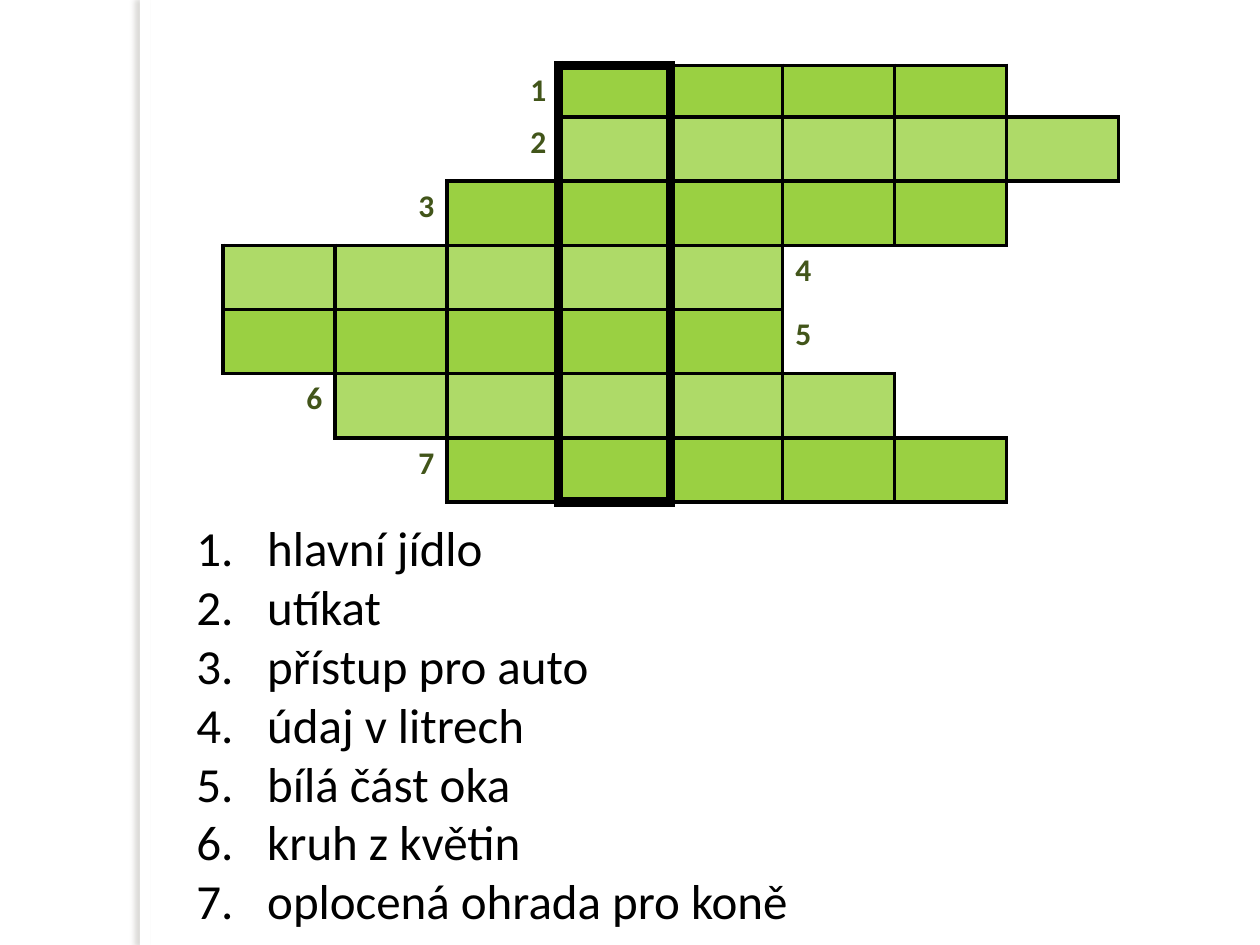
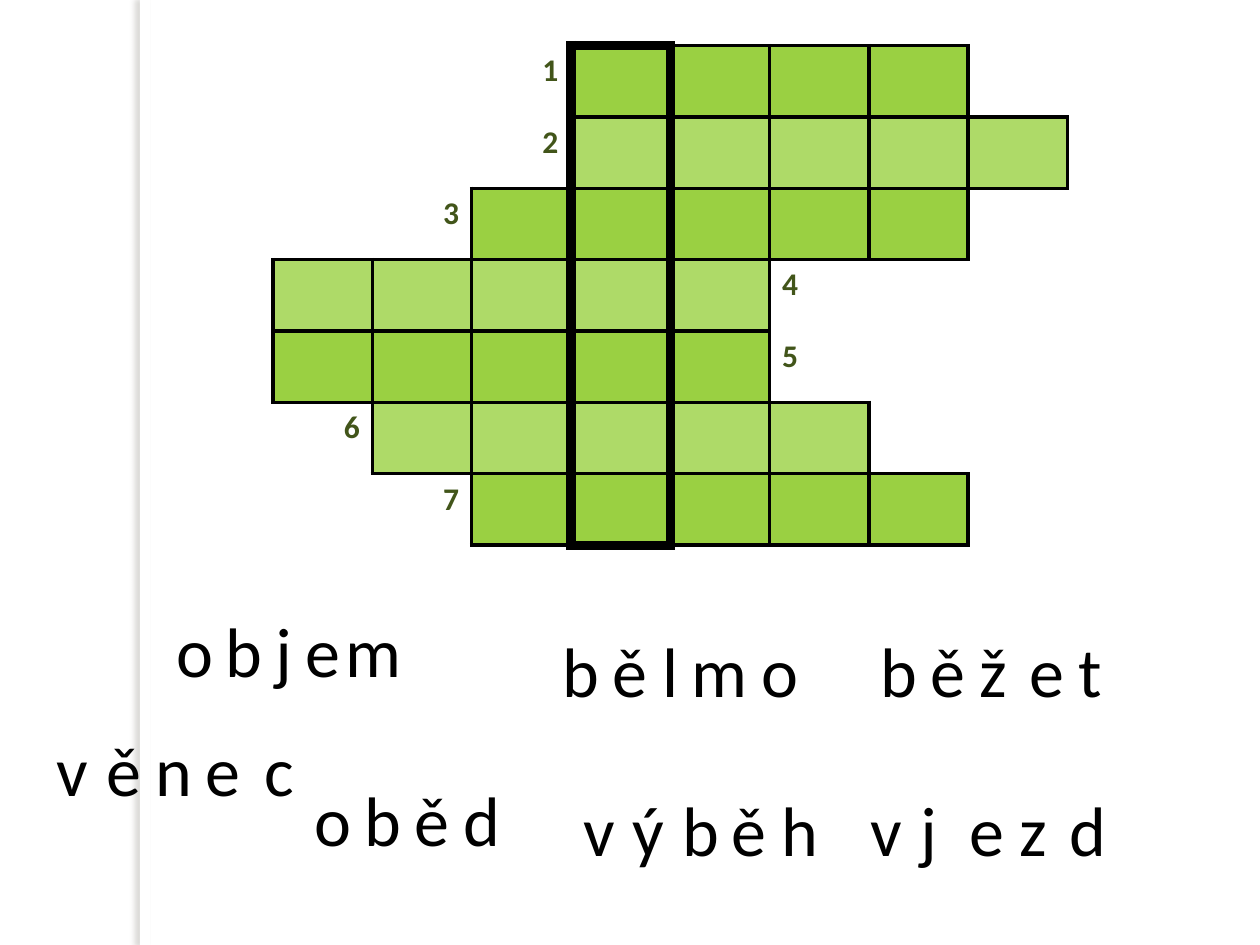
from lxml import etree
from pptx import Presentation
from pptx.dml.color import RGBColor
from pptx.enum import shapes, text
from pptx.oxml import ns
from pptx.util import Pt

WHITE = RGBColor(0xFF, 0xFF, 0xFF)
BLACK = RGBColor(0, 0, 0)
SHADOW = RGBColor(0x73, 0x6F, 0x63)
GREEN = RGBColor(0x9A, 0xD0, 0x42)
LIGHT_GREEN = RGBColor(0xAE, 0xDA, 0x68)
DARK_GREEN = RGBColor(0x42, 0x55, 0x1A)

FONT = "Calibri"
NUMBER_FORMAT = {"name": FONT, "size": Pt(18), "bold": True}
CLUE_FORMAT = {"name": FONT, "size": Pt(28)}
LETTER_FORMAT = {"name": FONT, "size": Pt(40)}

THIN, THICK = 2.25, 6
COLUMNS = 8
KEY_COLUMN = 3
# First column and number of letters of each answer
ANSWERS = [(3, 4), (3, 5), (2, 5), (0, 5), (0, 5), (1, 5), (2, 5)]

CLUES = ["hlavní jídlo", "utíkat", "přístup pro auto", "údaj v litrech",
         "bílá část oka", "kruh z květin", "oplocená ohrada pro koně"]
CLUE_INDENT = 40.5

LETTER_STEP = 28.35
LETTER_HEIGHT = 55.7
LETTER_WIDTHS = {"m": 48.2, "j": 23.8, "l": 23.8, "t": 25.9,
                 **dict.fromkeys("vzžcý", 34.6)}
USUAL_LETTER_WIDTH = 36.7
# Word, left, top, and steps that differ from the usual one, by letter index
WORDS = [
    ("oběd", 172.8, 439.9, {}),
    ("běžet", 496.1, 355, {}),
    ("vjezd", 490.4, 445.7, {}),
    ("objem", 93.6, 343.4, {3: 17, 4: 23}),
    ("bělmo", 314.6, 355, {3: 17, 4: 39.6}),
    ("věnec", 25.3, 411.8, {4: 34}),
    ("výběh", 326.1, 445.7, {}),
]


def add_xml(parent, tag, **attributes):
    return etree.SubElement(parent, ns.qn(tag), attributes)


def set_format(font, values, color):
    for name, value in values.items():
        setattr(font, name, value)
    font.color.rgb = color


def add_band_to_master(deck, page):
    """Draw the vertical band on the page, then move it to the master."""
    band = page.shapes.add_shape(shapes.MSO_SHAPE.RECTANGLE,
                                 Pt(80), 0, Pt(5.8), deck.slide_height)
    band.fill.solid()
    band.fill.fore_color.rgb = WHITE
    band.line.fill.background()
    effects = add_xml(band.element.spPr, "a:effectLst")
    shadow = add_xml(effects, "a:outerShdw", blurRad=str(Pt(3)),
                     dist=str(Pt(3)), dir="10800000", rotWithShape="0")
    color = add_xml(shadow, "a:srgbClr", val=str(SHADOW))
    add_xml(color, "a:alpha", val="25000")
    deck.slide_master.shapes.element.append(band.element)


def is_letter_cell(row, column):
    if not 0 <= row < len(ANSWERS):
        return False
    start, length = ANSWERS[row]
    return start <= column < start + length


def border_widths(row, column):
    """Width of each side; zero where no letter cell touches the side."""
    neighbours = {"L": (row, column - 1), "R": (row, column + 1),
                  "T": (row - 1, column), "B": (row + 1, column)}
    widths = {}
    for side, neighbour in neighbours.items():
        is_key = (column == KEY_COLUMN) != (neighbour[1] == KEY_COLUMN)
        is_key_end = column == KEY_COLUMN and not 0 <= neighbour[0] < len(ANSWERS)
        touches = is_letter_cell(row, column) or is_letter_cell(*neighbour)
        widths[side] = (THICK if is_key or is_key_end else THIN) if touches else 0
    return widths


def format_cell(cell, row, column):
    properties = cell._tc.get_or_add_tcPr()
    for side, width in border_widths(row, column).items():
        line = add_xml(properties, f"a:ln{side}", w=str(Pt(width)))
        if width:
            add_xml(add_xml(line, "a:solidFill"), "a:srgbClr", val=str(BLACK))
        else:
            add_xml(line, "a:noFill")
    cell.fill.solid()
    row_color = LIGHT_GREEN if row % 2 else GREEN
    cell.fill.fore_color.rgb = row_color if is_letter_cell(row, column) else WHITE


def add_crossword(page, left, top, column_width, row_heights):
    grid = page.shapes.add_table(
        len(ANSWERS), COLUMNS, Pt(left), Pt(top),
        Pt(column_width * COLUMNS), Pt(sum(row_heights))).table
    grid.first_row = grid.horz_banding = False
    for column in grid.columns:
        column.width = Pt(column_width)
    for row, (start, length) in enumerate(ANSWERS):
        grid.rows[row].height = Pt(row_heights[row])
        for column in range(COLUMNS):
            format_cell(grid.cell(row, column), row, column)
        para = grid.cell(row, start - 1 if start else length).text_frame.paragraphs[0]
        if start:
            para.alignment = text.PP_ALIGN.RIGHT
        span = para.add_run()
        span.text = str(row + 1)
        set_format(span.font, NUMBER_FORMAT, DARK_GREEN)


def add_text_box(page, left, top, width, height):
    box = page.shapes.add_textbox(Pt(left), Pt(top), Pt(width), Pt(height))
    box.text_frame.word_wrap = False
    box.text_frame.auto_size = text.MSO_AUTO_SIZE.SHAPE_TO_FIT_TEXT
    return box.text_frame


def add_clues(page, left, top, width, height):
    frame = add_text_box(page, left, top, width, height)
    for index, clue in enumerate(CLUES):
        para = frame.add_paragraph() if index else frame.paragraphs[0]
        properties = para._p.get_or_add_pPr()
        properties.set("marL", str(Pt(CLUE_INDENT)))
        properties.set("indent", str(-Pt(CLUE_INDENT)))
        add_xml(properties, "a:buFont", typeface="+mj-lt")
        add_xml(properties, "a:buAutoNum", type="arabicPeriod")
        span = para.add_run()
        span.text = clue
        set_format(span.font, CLUE_FORMAT, BLACK)


def add_letters(page, word, left, top, steps):
    """Put each letter of the word in a box of its own."""
    for index, letter in enumerate(word):
        if index:
            left += steps.get(index, LETTER_STEP)
        width = LETTER_WIDTHS.get(letter, USUAL_LETTER_WIDTH)
        frame = add_text_box(page, left, top, width, LETTER_HEIGHT)
        span = frame.paragraphs[0].add_run()
        span.text = letter
        set_format(span.font, LETTER_FORMAT, BLACK)


def main():
    deck = Presentation()
    deck.slide_width, deck.slide_height = Pt(720), Pt(540)
    blank = deck.slide_layouts[6]

    clue_page = deck.slides.add_slide(blank)
    add_band_to_master(deck, clue_page)
    add_crossword(clue_page, 127.4, 37.4, 64, [29.4] + [36.7] * 6)
    add_clues(clue_page, 105.1, 292.3, 385.2, 244.8)

    letter_page = deck.slides.add_slide(blank)
    add_crossword(letter_page, 156, 26, 56.75, [40.8] * 7)
    for word in WORDS:
        add_letters(letter_page, *word)

    deck.save("out.pptx")


if __name__ == "__main__":
    main()
